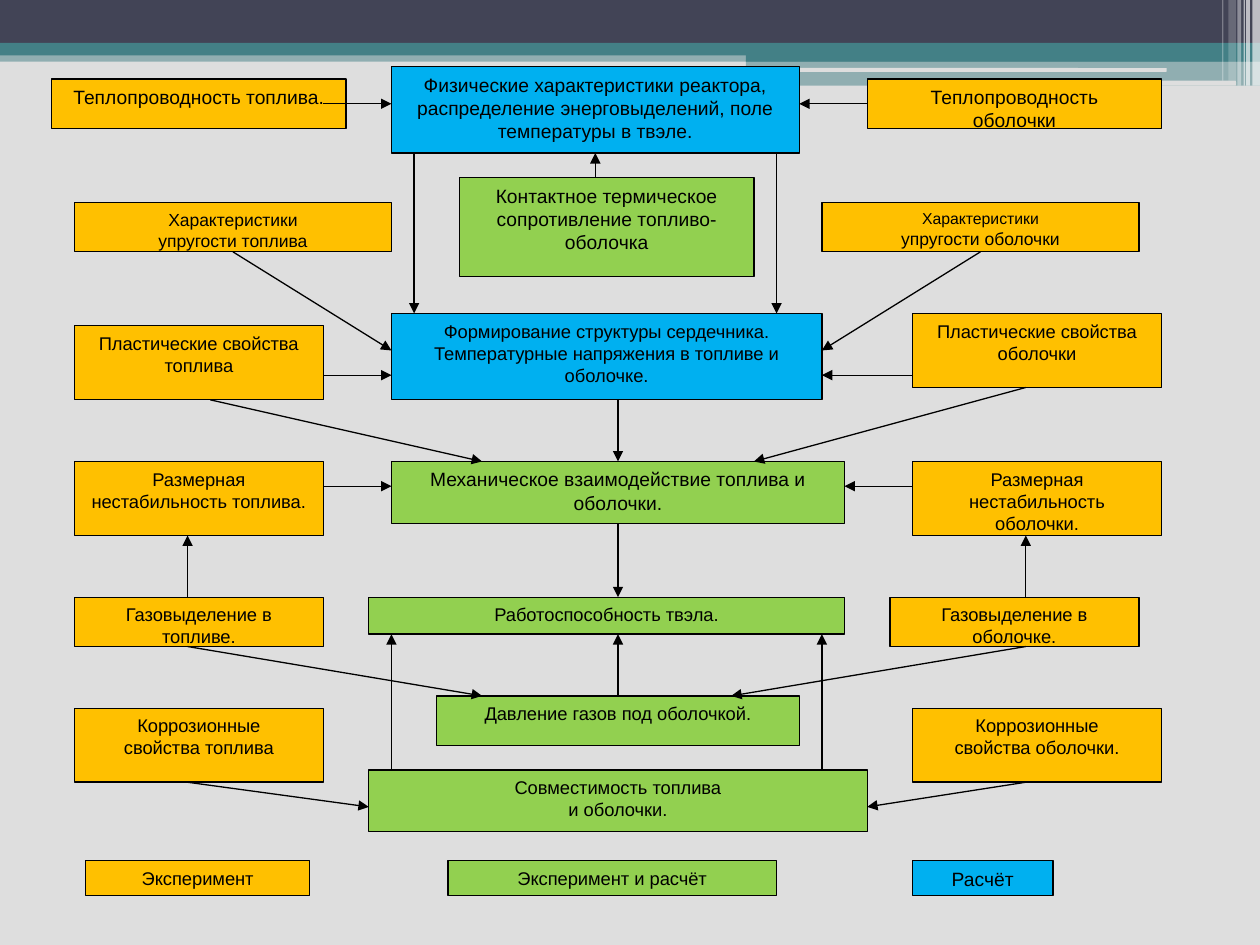
from typing import NamedTuple

from lxml import etree
from pptx import Presentation
from pptx.dml.color import RGBColor
from pptx.enum.shapes import MSO_CONNECTOR, MSO_SHAPE
from pptx.enum.text import MSO_ANCHOR, PP_ALIGN
from pptx.oxml.ns import qn
from pptx.util import Inches, Pt

RECTANGLE, ROUNDED = MSO_SHAPE.RECTANGLE, MSO_SHAPE.ROUNDED_RECTANGLE
STRAIGHT = MSO_CONNECTOR.STRAIGHT
CENTER, TOP = PP_ALIGN.CENTER, MSO_ANCHOR.TOP

WIDTH, HEIGHT = 10, 7.5
LEFT, TOP_EDGE = 0.41, 0.53      # origin of the diagram grid
COLUMN, ROW = 0.18, 0.098        # nominal cell
COLUMN_SHARE, ROW_SHARE = 8.81 / 49, 6.07 / 62
FONT, BLACK, WHITE = "Arial", "000000", "FFFFFF"
PAPER, NAVY, TEAL = "DEDEDE", "424456", "438086"
EXPERIMENT, MIXED, CALCULATION = "FFC000", "92D050", "00B0F0"


class Band(NamedTuple):
    """Header decoration, in inches."""
    left: float
    top: float
    width: float
    height: float
    color: str
    opacity: int = 100
    rounded: bool = False


class Box(NamedTuple):
    """Diagram node, in grid columns and rows."""
    column: float
    row: float
    columns: float
    rows: float
    color: str
    text: str
    sizes: tuple = (10.5,)


class Arrow(NamedTuple):
    """Link between two grid points."""
    from_column: float
    from_row: float
    to_column: float
    to_row: float


BANDS = [
    Band(0, 0.4, WIDTH, 0.09, TEAL, 50),
    Band(0, 0, WIDTH, 0.34, NAVY),
    Band(0, 0.34, WIDTH, 0.1, TEAL),
    Band(5.92, 0.39, 4.08, 0.1, TEAL),
    Band(5.92, 0.48, 4.08, 0.2, TEAL, 50),
    Band(5.91, 0.54, 3.35, 0.03, PAPER, rounded=True),
    Band(8.06, 0.64, 1.75, 0.04, PAPER, rounded=True),
] + [
    Band(left, 0, width, height, WHITE, opacity)
    for left, width, height, opacity in [
        (9.94, 0.06, 0.68, 65), (9.89, 0.03, 0.68, 65), (9.87, 0.01, 0.68, 60),
        (9.82, 0.03, 0.68, 40), (9.75, 0.06, 0.64, 20), (9.7, 0.01, 0.64, 30)]
]

BOXES = [
    # fuel properties
    Box(0, 1, 13, 4, EXPERIMENT, "Теплопроводность топлива.", (11,)),
    Box(1, 11, 14, 4, EXPERIMENT, "Характеристики\nупругости топлива", (10,)),
    Box(1, 21, 11, 6, EXPERIMENT, "Пластические свойства топлива"),
    Box(1, 32, 11, 6, EXPERIMENT, "Размерная нестабильность топлива."),
    Box(1, 43, 11, 4, EXPERIMENT, "Газовыделение в топливе."),
    Box(1, 52, 11, 6, EXPERIMENT, "Коррозионные\nсвойства топлива"),
    # cladding properties
    Box(36, 1, 13, 4, EXPERIMENT, "Теплопроводность\nоболочки", (11,)),
    Box(34, 11, 14, 4, EXPERIMENT, "Характеристики\nупругости оболочки", (9, 10)),
    Box(38, 20, 11, 6, EXPERIMENT, "Пластические свойства оболочки"),
    Box(38, 32, 11, 6, EXPERIMENT, "Размерная нестабильность оболочки."),
    Box(37, 43, 11, 4, EXPERIMENT, "Газовыделение в оболочке."),
    Box(38, 52, 11, 6, EXPERIMENT, "Коррозионные\nсвойства оболочки."),
    # fuel element behaviour
    Box(15, 0, 18, 7, CALCULATION, "Физические характеристики реактора, распределение "
        "энерговыделений, поле температуры в твэле.", (11,)),
    Box(18, 9, 13, 8, MIXED, "Контактное термическое сопротивление топливо-оболочка", (11,)),
    Box(15, 20, 19, 7, CALCULATION, "Формирование структуры сердечника. "
        "Температурные напряжения в топливе и оболочке."),
    Box(15, 32, 20, 5, MIXED, "Механическое взаимодействие топлива и оболочки.", (11,)),
    Box(14, 43, 21, 3, MIXED, "Работоспособность твэла."),
    Box(17, 51, 16, 4, MIXED, "Давление газов под оболочкой."),
    Box(14, 57, 22, 5, MIXED, "Совместимость топлива\nи оболочки."),
    # legend
    Box(1.5, 64.35, 9.9, 2.85, EXPERIMENT, "Эксперимент"),
    Box(17.5, 64.35, 14.5, 2.85, MIXED, "Эксперимент и расчёт"),
    Box(38, 64.35, 6.2, 2.85, CALCULATION, "Расчёт", (11,)),
]

ARROWS = [
    # from the fuel side
    Arrow(12, 3, 15, 3), Arrow(8, 15, 15, 23), Arrow(12, 25, 15, 25),
    Arrow(7, 27, 19, 32), Arrow(12, 34, 15, 34), Arrow(6, 43, 6, 38),
    Arrow(6, 47, 19, 51), Arrow(6, 58, 14, 60),
    # from the cladding side
    Arrow(36, 3, 33, 3), Arrow(41, 15, 34, 23), Arrow(38, 25, 34, 25),
    Arrow(43, 26, 31, 32), Arrow(38, 34, 35, 34), Arrow(43, 43, 43, 38),
    Arrow(43, 47, 30, 51), Arrow(43, 58, 36, 60),
    # down and up the middle
    Arrow(24, 9, 24, 7), Arrow(16, 7, 16, 20), Arrow(32, 7, 32, 20),
    Arrow(25, 27, 25, 32), Arrow(25, 37, 25, 43), Arrow(25, 51, 25, 46),
    Arrow(15, 57, 15, 46), Arrow(34, 57, 34, 46),
]


def rgb(color: str) -> RGBColor:
    return RGBColor.from_string(color)


def grid_x(column: float) -> int:
    return Inches(LEFT + column * COLUMN_SHARE)


def grid_y(row: float) -> int:
    return Inches(TOP_EDGE + row * ROW_SHARE)


def write(shape, text: str, *, sizes: tuple, color: str = BLACK) -> None:
    """Fill the shape with one paragraph a line; the last size carries on."""
    frame = shape.text_frame
    frame.word_wrap = True
    frame.vertical_anchor = TOP
    for index, line in enumerate(text.split("\n")):
        para = frame.add_paragraph() if index else frame.paragraphs[0]
        para.alignment = CENTER
        span = para.add_run()
        span.text = line
        span.font.name = FONT
        span.font.size = Pt(sizes[min(index, len(sizes) - 1)])
        span.font.color.rgb = rgb(color)


def draw_band(page, band: Band) -> None:
    shape = page.shapes.add_shape(
        ROUNDED if band.rounded else RECTANGLE,
        *map(Inches, (band.left, band.top, band.width, band.height)))
    shape.shadow.inherit = False
    shape.fill.solid()
    shape.fill.fore_color.rgb = rgb(band.color)
    shape.line.fill.background()
    if band.opacity < 100:
        tint = shape.fill._xPr.find(f"{qn('a:solidFill')}/{qn('a:srgbClr')}")
        etree.SubElement(tint, qn("a:alpha"), val=str(band.opacity * 1000))


def draw_box(page, box: Box) -> None:
    left, top = grid_x(box.column), grid_y(box.row)
    shape = page.shapes.add_shape(
        RECTANGLE, left, top,
        grid_x(box.column + box.columns) - left, grid_y(box.row + box.rows) - top)
    shape.shadow.inherit = False
    shape.fill.solid()
    shape.fill.fore_color.rgb = rgb(box.color)
    shape.line.color.rgb = rgb(BLACK)
    shape.line.width = Pt(0.75)
    write(shape, box.text, sizes=box.sizes)


def draw_arrow(page, arrow: Arrow) -> None:
    connector = page.shapes.add_connector(
        STRAIGHT, grid_x(arrow.from_column), grid_y(arrow.from_row),
        grid_x(arrow.to_column), grid_y(arrow.to_row))
    connector.line.color.rgb = rgb(BLACK)
    connector.line.width = Pt(0.75)
    etree.SubElement(connector.line._get_or_add_ln(), qn("a:tailEnd"), type="triangle")
    etree.SubElement(connector._element.spPr, qn("a:effectLst"))


def main() -> None:
    deck = Presentation()
    deck.slide_width, deck.slide_height = Inches(WIDTH), Inches(HEIGHT)
    page = deck.slides.add_slide(deck.slide_layouts[6])
    page.background.fill.solid()
    page.background.fill.fore_color.rgb = rgb(PAPER)
    for draw, items in ((draw_band, BANDS), (draw_box, BOXES), (draw_arrow, ARROWS)):
        for item in items:
            draw(page, item)
    deck.save("out.pptx")


if __name__ == "__main__":
    main()
